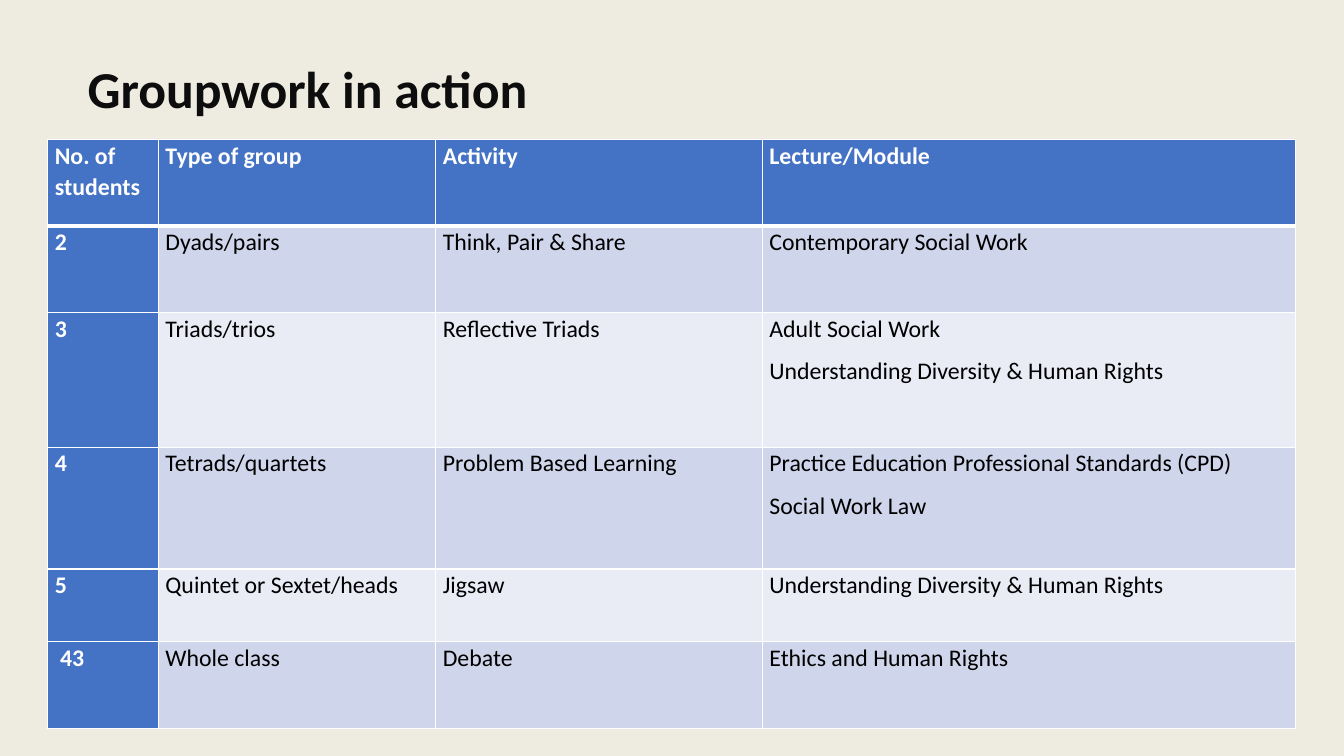
from lxml.etree import SubElement
from pptx import Presentation
from pptx.dml.color import RGBColor
from pptx.enum.shapes import MSO_SHAPE
from pptx.enum.text import MSO_ANCHOR
from pptx.oxml.ns import qn
from pptx.util import Cm, Pt

COLORS = {
    "base": "F2F2F2", "tint": "BF9000", "title": "0D0D0D",
    "head": "4472C4", "odd": "CFD5EA", "even": "E9EBF5",
    "white": "FFFFFF", "black": "000000",
}
WIDTHS = [2.79, 6.99, 8.23, 13.44]
HEIGHTS = [2.18, 2.18, 3.4, 3.07, 1.83, 2.18]
ROWS = [
    ["No. of students", "Type of group", "Activity", "Lecture/Module"],
    ["2", "Dyads/pairs", "Think, Pair & Share", "Contemporary Social Work"],
    ["3", "Triads/trios", "Reflective Triads",
     "Adult Social Work\nUnderstanding Diversity & Human Rights"],
    ["4", "Tetrads/quartets", "Problem Based Learning",
     "Practice Education Professional Standards (CPD)\nSocial Work Law"],
    ["5", "Quintet or Sextet/heads", "Jigsaw",
     "Understanding Diversity & Human Rights"],
    [" 43", "Whole class", "Debate", "Ethics and Human Rights"],
]


def style(para, size, color, bold):
    """Format every run of a paragraph."""
    for run in para.runs:
        run.font.name = "Calibri"
        run.font.size = Pt(size)
        run.font.bold = bold
        run.font.color.rgb = RGBColor.from_string(COLORS[color])


def border(cell, side, width):
    """Draw a white line on one side of a cell; call before filling it."""
    line = SubElement(cell._tc.get_or_add_tcPr(), qn(f"a:ln{side}"),
                      w=str(Pt(width)))
    fill = SubElement(line, qn("a:solidFill"))
    SubElement(fill, qn("a:srgbClr"), val=COLORS["white"])


prs = Presentation()
prs.slide_width = Cm(33.87)
prs.slide_height = Cm(19.05)
slide = prs.slides.add_slide(prs.slide_layouts[6])

# Backdrop: a grey sheet under a faint gold tint
for name in ["base", "tint"]:
    sheet = slide.shapes.add_shape(
        MSO_SHAPE.RECTANGLE, 0, 0, prs.slide_width, prs.slide_height)
    sheet.shadow.inherit = False
    sheet.line.fill.background()
    sheet.fill.solid()
    sheet.fill.fore_color.rgb = RGBColor.from_string(COLORS[name])
tint = sheet._element.spPr.find(qn("a:solidFill"))[0]
SubElement(tint, qn("a:alpha"), val="7000")

# Table
table = slide.shapes.add_table(
    len(ROWS), len(WIDTHS), Cm(1.2), Cm(3.51),
    Cm(sum(WIDTHS)), Cm(sum(HEIGHTS))).table
table.first_col = True
for col, width in zip(table.columns, WIDTHS):
    col.width = Cm(width)
for r, (row, height) in enumerate(zip(ROWS, HEIGHTS)):
    table.rows[r].height = Cm(height)
    for c, words in enumerate(row):
        cell = table.cell(r, c)
        cell.margin_left = cell.margin_right = Cm(0.18)
        cell.margin_top = cell.margin_bottom = 0
        border(cell, "L", 1)
        border(cell, "R", 1)
        border(cell, "T", 3 if r == 1 else 1)
        border(cell, "B", 3 if r == 0 else 1)
        head = r == 0 or c == 0
        shade = "head" if head else "odd" if r % 2 else "even"
        cell.fill.solid()
        cell.fill.fore_color.rgb = RGBColor.from_string(COLORS[shade])
        cell.text_frame.text = words
        for para in cell.text_frame.paragraphs:
            para.line_spacing = 1.07
            para.space_after = Pt(8)
            style(para, 17, "white" if head else "black", head)

# Title
box = slide.shapes.add_textbox(Cm(1.96), Cm(0.69), Cm(19.61), Cm(3.23))
frame = box.text_frame
frame.word_wrap = True
frame.vertical_anchor = MSO_ANCHOR.MIDDLE
frame.text = "Groupwork in action"
frame.paragraphs[0].line_spacing = 0.9
style(frame.paragraphs[0], 37, "title", True)

prs.save("out.pptx")
